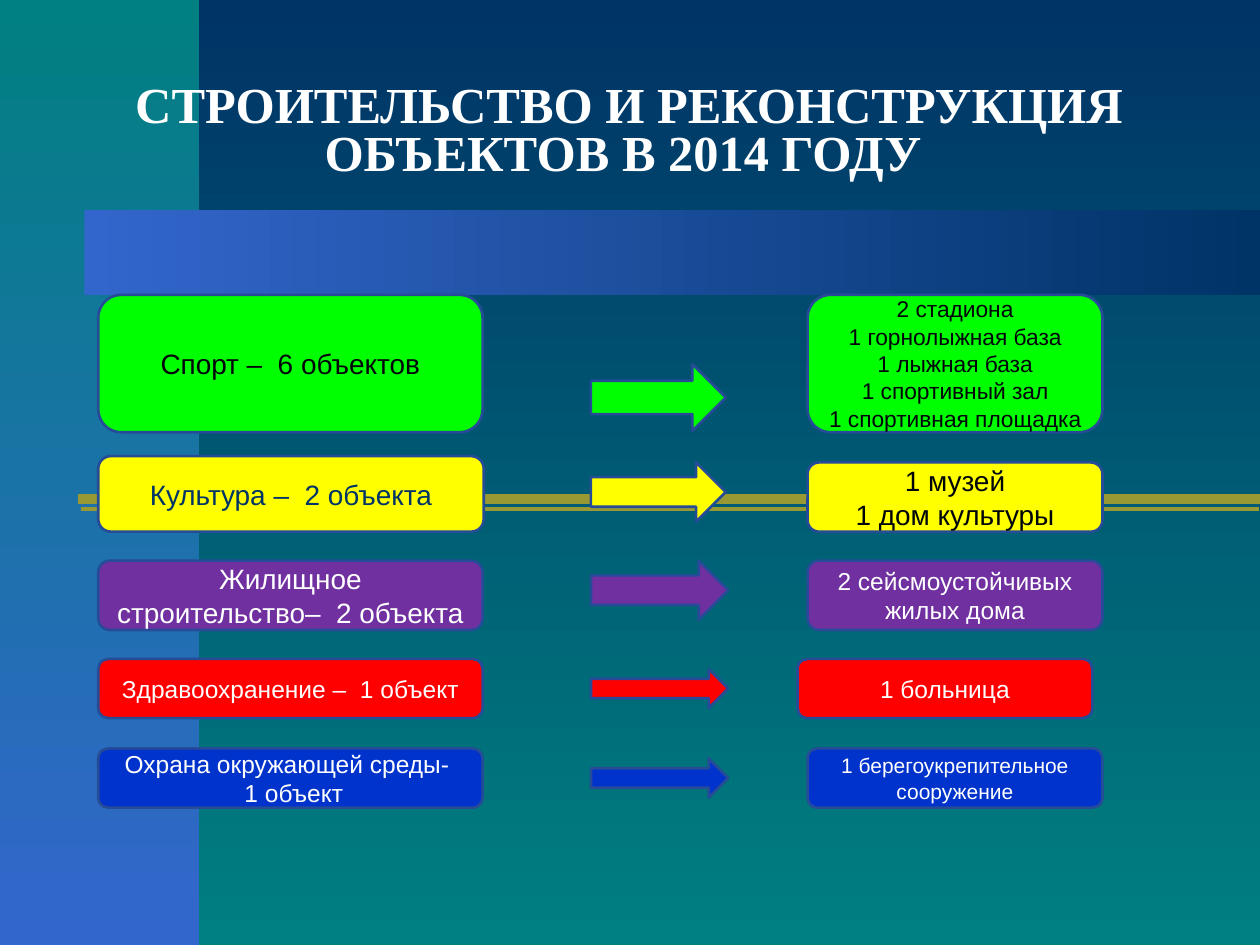
from lxml import etree
from pptx import Presentation
from pptx.dml.color import RGBColor
from pptx.enum.shapes import MSO_CONNECTOR, MSO_SHAPE
from pptx.enum.text import MSO_ANCHOR, PP_ALIGN
from pptx.oxml import parse_xml
from pptx.oxml.ns import nsdecls, qn
from pptx.util import Inches, Pt

COLORS = {
    "navy": "003366", "teal": "008080", "sky": "3366CC", "olive": "999933",
    "border": "264B97", "white": "FFFFFF", "ink": "00050A", "green": "00FF00",
    "yellow": "FFFF00", "purple": "7030A0", "red": "FF0000", "blue": "0033CC",
}
TITLE = "СТРОИТЕЛЬСТВО И РЕКОНСТРУКЦИЯ ОБЪЕКТОВ В 2014 ГОДУ "
CATEGORY_LEFT, ARROW_LEFT, DETAIL_LEFT = 0.78, 4.69, 6.41
DETAIL_WIDTH = 2.34

# Each box: text, size, text colour, left, top, width, height; each arrow: top, width, height
ROWS = [
    {"color": "green",
     "category": ("Спорт –  6 объектов", 16, "ink", CATEGORY_LEFT, 2.34, 3.05, 1.09),
     "arrow": (2.89, 1.07, 0.53),
     "detail": ("2 стадиона\n1 горнолыжная база\n1 лыжная база\n1 спортивный зал\n1 спортивная площадка",
                13, "ink", DETAIL_LEFT, 2.34, DETAIL_WIDTH, 1.09)},
    {"color": "yellow",
     "category": ("Культура –  2 объекта", 16, "navy", CATEGORY_LEFT, 3.62, 3.06, 0.6),
     "arrow": (3.67, 1.07, 0.47),
     "detail": ("1 музей\n1 дом культуры", 16, "ink", DETAIL_LEFT, 3.67, DETAIL_WIDTH, 0.55)},
    {"color": "purple",
     "category": ("Жилищное строительство–  2 объекта", 16, "white", CATEGORY_LEFT, 4.45, 3.05, 0.55),
     "arrow": (4.45, 1.09, 0.47),
     "detail": ("2 сейсмоустойчивых жилых дома", 14, "white", DETAIL_LEFT, 4.45, DETAIL_WIDTH, 0.55)},
    {"color": "red",
     "category": ("Здравоохранение –  1 объект", 14, "white", CATEGORY_LEFT, 5.23, 3.05, 0.47),
     "arrow": (5.31, 1.09, 0.31),
     "detail": ("1 больница", 14, "white", 6.33, 5.23, DETAIL_WIDTH, 0.47)},
    {"color": "blue",
     "category": ("Охрана окружающей среды- \n 1 объект", 14, "white", CATEGORY_LEFT, 5.94, 3.05, 0.47),
     "arrow": (6.02, 1.09, 0.31),
     "detail": ("1 берегоукрепительное сооружение", 12, "white", DETAIL_LEFT, 5.94, DETAIL_WIDTH, 0.47)},
]


def rgb(name):
    return RGBColor.from_string(COLORS[name])


def set_gradient(fill, start, end, angle):
    fill.gradient()
    fill.gradient_angle = angle
    for stop, name, position in zip(fill.gradient_stops, (start, end), (0, 1)):
        stop.color.rgb = rgb(name)
        stop.position = position


def add_gradient_panel(slide, box, start, end, angle):
    shape = slide.shapes.add_shape(MSO_SHAPE.RECTANGLE, *map(Inches, box))
    shape.shadow.inherit = False
    shape.line.fill.background()
    set_gradient(shape.fill, start, end, angle)


def add_rule(slide, top, width):
    line = slide.shapes.add_connector(
        MSO_CONNECTOR.STRAIGHT, Inches(0.66), Inches(top), Inches(9.98), Inches(top))
    line.line.color.rgb = rgb("olive")
    line.line.width = Pt(width)
    line.line._ln.set("cap", "sq")
    etree.SubElement(line._element.spPr, qn("a:effectLst"))


def add_block(slide, kind, color, left, top, width, height):
    shape = slide.shapes.add_shape(kind, *map(Inches, (left, top, width, height)))
    shape.shadow.inherit = False
    shape.fill.solid()
    shape.fill.fore_color.rgb = rgb(color)
    shape.line.color.rgb = rgb("border")
    shape.line.width = Pt(1.5)
    return shape


def write_text(shape, text, size, color, font="Arial", bold=False):
    frame = shape.text_frame
    frame.text = text
    frame.word_wrap = True
    frame.vertical_anchor = MSO_ANCHOR.MIDDLE
    for paragraph in frame.paragraphs:
        paragraph.alignment = PP_ALIGN.CENTER
        for run in paragraph.runs:
            run.font.size = Pt(size)
            run.font.name = font
            run.font.bold = bold
            run.font.color.rgb = rgb(color)


def add_title(slide):
    title = slide.shapes.add_textbox(*map(Inches, (0.7, 0.47, 8.59, 1.17)))
    write_text(title, TITLE, 28.8, "white", "Times New Roman", True)
    paragraph = title.text_frame.paragraphs[0]
    paragraph.line_spacing = 0.8
    properties = paragraph.runs[0]._r.get_or_add_rPr()
    properties.find(qn("a:solidFill")).addnext(parse_xml(
        f'<a:effectLst {nsdecls("a")}><a:outerShdw dist="38100" dir="2700000">'
        f'<a:srgbClr val="{COLORS["navy"]}"/></a:outerShdw></a:effectLst>'))


def main():
    presentation = Presentation()
    presentation.slide_width, presentation.slide_height = Inches(10), Inches(7.5)
    slide = presentation.slides.add_slide(presentation.slide_layouts[6])
    set_gradient(slide.background.fill, "navy", "teal", 270)
    add_gradient_panel(slide, (0, 0, 1.58, 7.5), "teal", "sky", 270)
    add_rule(slide, 4.04, 2)
    add_rule(slide, 3.96, 6)
    add_gradient_panel(slide, (0.67, 1.67, 9.33, 0.67), "sky", "navy", 0)
    add_title(slide)
    kinds = {"category": MSO_SHAPE.FLOWCHART_ALTERNATE_PROCESS,
             "detail": MSO_SHAPE.ROUNDED_RECTANGLE}
    for row in ROWS:
        for role, kind in kinds.items():
            text, size, text_color, *box = row[role]
            write_text(add_block(slide, kind, row["color"], *box), text, size, text_color)
        add_block(slide, MSO_SHAPE.RIGHT_ARROW, row["color"], ARROW_LEFT, *row["arrow"])
    presentation.save("out.pptx")


if __name__ == "__main__":
    main()
